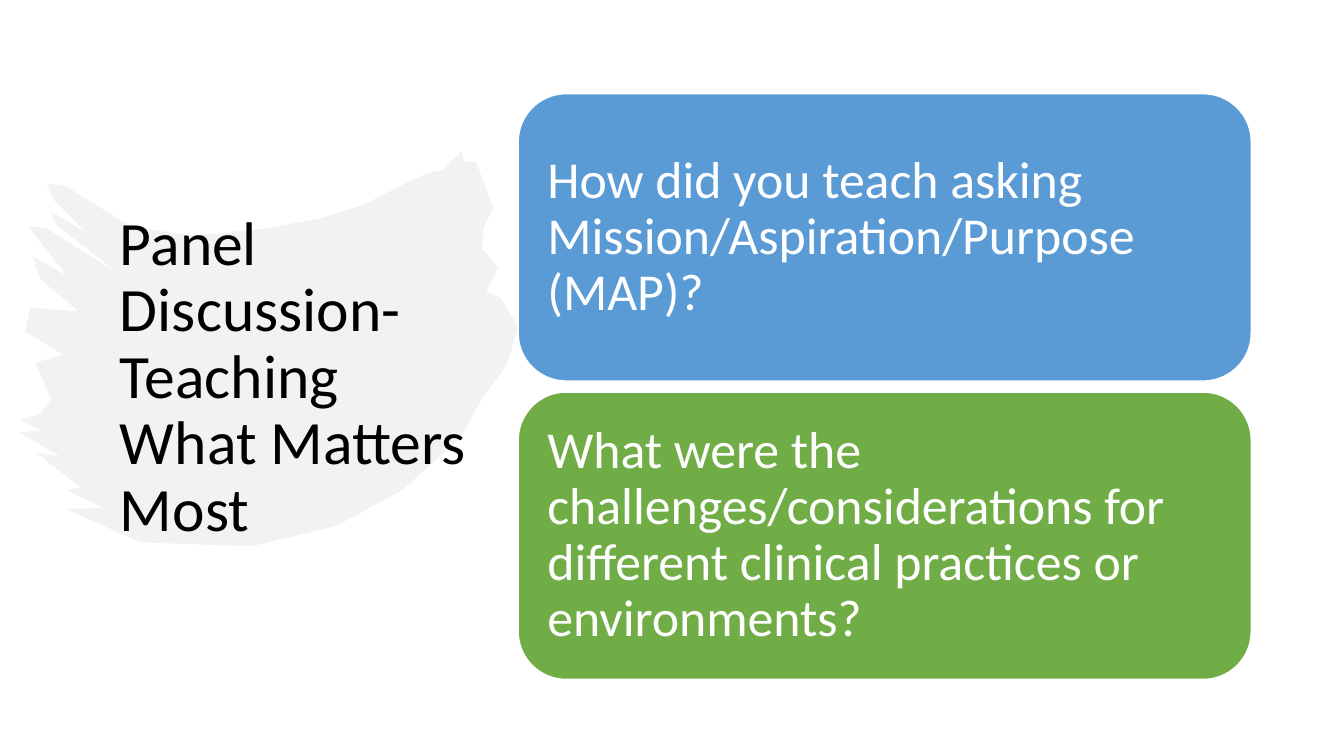
from pptx import Presentation
from pptx.dml.color import RGBColor
from pptx.enum import shapes, text
from pptx.oxml import ns
from pptx.util import Inches, Pt
from lxml import etree

BLACK = RGBColor(0x00, 0x00, 0x00)
WHITE = RGBColor(0xFF, 0xFF, 0xFF)
BLUE = RGBColor(0x5B, 0x9B, 0xD5)
GREEN = RGBColor(0x70, 0xAD, 0x47)
BRUSH_GRAY = RGBColor(0xE7, 0xE6, 0xE6)

TITLE = "Panel Discussion- Teaching What Matters Most"
QUESTIONS = [
    ("How did you teach asking Mission/Aspiration/Purpose (MAP)?", BLUE),
    ("What were the challenges/considerations for different clinical "
     "practices or environments?", GREEN),
]
BRUSH_OUTLINE = [
    (4.58, 1.5), (4.6, 1.6), (4.72, 1.6), (4.89, 2.06), (4.8, 2.26),
    (4.78, 2.46), (4.94, 2.66), (4.82, 2.89), (4.96, 2.95), (5.14, 3.24),
    (5.03, 3.61), (4.76, 3.99), (4.56, 4.35), (3.99, 4.86), (3.33, 5.22),
    (2.49, 5.42), (1.39, 5.38), (0.66, 5.05), (1.02, 5.04), (0.66, 4.86),
    (0.8, 4.84), (0.36, 4.49), (0.6, 4.53), (0.19, 4.29), (0.41, 4.27),
    (0.2, 4.17), (0.39, 4.11), (0.51, 3.96), (0.35, 3.6), (0.63, 3.52),
    (0.25, 3.29), (0.3, 3.05), (0.78, 3.09), (0.4, 2.77), (0.32, 2.54),
    (0.67, 2.74), (0.28, 2.25), (0.45, 2.26), (1.17, 2.71), (0.56, 2.23),
    (0.5, 2.1), (0.85, 2.3), (0.53, 1.98), (0.46, 1.82), (0.64, 1.84),
    (1.3, 2.25), (1.92, 2.34), (2.6, 2.27), (3.17, 2.17), (3.61, 2.03),
    (4.02, 1.82), (4.23, 1.72), (4.38, 1.69),
]

TILE_LEFT, TILE_TOP = 5.14, 0.93
TILE_WIDTH, TILE_HEIGHT, TILE_GAP = 7.27, 2.85, 0.11


def write(frame, wording, *, size, color, inset_x, inset_y):
    """Fill a frame with one left-aligned, vertically centred paragraph."""
    frame.word_wrap = True
    frame.auto_size = text.MSO_AUTO_SIZE.NONE
    frame.vertical_anchor = text.MSO_ANCHOR.MIDDLE
    frame.margin_left = frame.margin_right = Inches(inset_x)
    frame.margin_top = frame.margin_bottom = Inches(inset_y)
    paragraph = frame.paragraphs[0]
    paragraph.alignment = text.PP_ALIGN.LEFT
    paragraph.line_spacing = 0.9
    run = paragraph.add_run()
    run.text = wording
    run.font.name = "Calibri"
    run.font.size = Pt(size)
    run.font.color.rgb = color


def main():
    """Build the panel discussion slide."""
    deck = Presentation()
    deck.slide_width, deck.slide_height = Inches(13.33), Inches(7.5)
    slide = deck.slides.add_slide(deck.slide_layouts[5])

    start, *rest = [(Inches(x), Inches(y)) for x, y in BRUSH_OUTLINE]
    outline = slide.shapes.build_freeform(*start)
    outline.add_line_segments(rest, close=True)
    brush = outline.convert_to_shape()
    brush.shadow.inherit = False
    brush.line.fill.background()
    brush.fill.solid()
    brush.fill.fore_color.rgb = BRUSH_GRAY
    brush_color = brush._element.spPr.find(".//" + ns.qn("a:srgbClr"))
    etree.SubElement(brush_color, ns.qn("a:alpha"), val="50000")

    title = slide.shapes.title
    title.left, title.top = Inches(1.09), Inches(0.75)
    title.width, title.height = Inches(3.82), Inches(6.01)
    write(title.text_frame, TITLE, size=44, color=BLACK,
          inset_x=0.1, inset_y=0.05)
    slide.shapes._spTree.append(title._element)

    for row, (question, fill) in enumerate(QUESTIONS):
        top = TILE_TOP + row * (TILE_HEIGHT + TILE_GAP)
        tile = slide.shapes.add_shape(
            shapes.MSO_SHAPE.ROUNDED_RECTANGLE, Inches(TILE_LEFT), Inches(top),
            Inches(TILE_WIDTH), Inches(TILE_HEIGHT))
        tile.shadow.inherit = False
        tile.fill.solid()
        tile.fill.fore_color.rgb = fill
        tile.line.color.rgb = WHITE
        tile.line.width = Pt(1)
        write(tile.text_frame, question, size=37, color=WHITE,
              inset_x=0.15, inset_y=0.15)

    deck.save("out.pptx")


if __name__ == "__main__":
    main()
